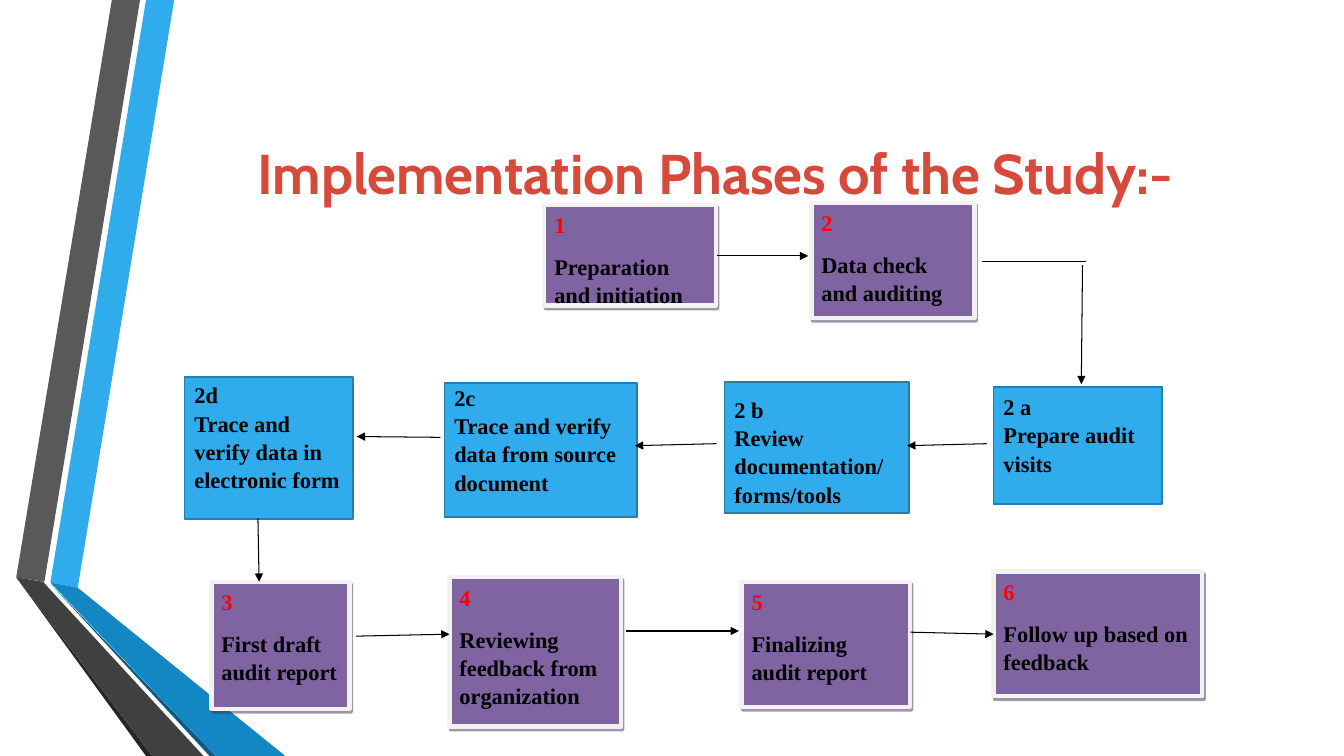
"""Build a slide showing the implementation phases of a study as a flow of boxes."""
from dataclasses import dataclass

from lxml import etree
from pptx import Presentation
from pptx.dml.color import RGBColor
from pptx.enum.shapes import MSO_CONNECTOR, MSO_SHAPE
from pptx.enum.text import MSO_ANCHOR, PP_ALIGN
from pptx.oxml.ns import qn
from pptx.util import Cm, Pt

RECT = MSO_SHAPE.RECTANGLE
LINE = MSO_CONNECTOR.STRAIGHT
TOP, MIDDLE = MSO_ANCHOR.TOP, MSO_ANCHOR.MIDDLE
LEFT, CENTER = PP_ALIGN.LEFT, PP_ALIGN.CENTER


@dataclass
class Theme:
    title: str = "D64A3B"
    phase: str = "8064A2"
    frame: str = "F2F2F2"
    shade: str = "3F3151"
    step: str = "30ACEC"
    edge: str = "247FAF"
    mark: str = "FF0000"
    ink: str = "000000"
    head: str = "Cabin"
    body: str = "Times New Roman"
    big: int = 40
    small: int = 16


theme = Theme()


def style(para, font, size, color):
    for run in para.runs:
        run.font.name = font
        run.font.size = Pt(size)
        run.font.bold = True
        run.font.color.rgb = RGBColor.from_string(color)


def add_box(area, lines, fill, edge, width, inset):
    box = slide.shapes.add_shape(RECT, *map(Cm, area))
    box.shadow.inherit = False
    box.fill.solid()
    box.fill.fore_color.rgb = RGBColor.from_string(fill)
    box.line.color.rgb = RGBColor.from_string(edge)
    box.line.width = Pt(width)
    frame = box.text_frame
    frame.word_wrap = True
    frame.vertical_anchor = TOP
    frame.margin_top = Cm(inset)
    frame.text = "\n".join(lines)
    for para in frame.paragraphs:
        para.alignment = LEFT
        para.line_spacing = 1.05
        style(para, theme.body, theme.small, theme.ink)
    return box


deck = Presentation()
deck.slide_width, deck.slide_height = Cm(33.87), Cm(19.05)
slide = deck.slides.add_slide(deck.slide_layouts[5])

bands = [
    ("30ACEC", [(1.27, 14.68), (1.96, 14.81), (4.39, 0), (3.68, 0)]),
    ("595959", [(3.53, 0), (2.82, 0), (0.41, 14.55), (1.12, 14.66)]),
    ("262626", [(0.41, 14.55), (3.68, 19.05), (3.84, 19.05)]),
    ("0C5A82", [(1.27, 14.71), (5.28, 19.05), (5.44, 19.05)]),
    ("1287C3", [(1.27, 14.68), (5.44, 19.05), (7.19, 19.05), (1.96, 14.81)]),
    ("404040", [(5.13, 19.05), (1.22, 14.81), (1.09, 14.66), (0.41, 14.55),
                (3.84, 19.05)]),
]
for color, points in bands:
    spots = [(Cm(x), Cm(y)) for x, y in points]
    path = slide.shapes.build_freeform(*spots[0])
    path.add_line_segments(spots[1:], close=True)
    band = path.convert_to_shape()
    band.shadow.inherit = False
    band.fill.solid()
    band.fill.fore_color.rgb = RGBColor.from_string(color)
    band.line.fill.background()

title = slide.shapes.title
title.left, title.top, title.width, title.height = map(Cm, (4.11, 1.9, 27.84, 4.88))
title.text_frame.text = "Implementation Phases of the Study:-"
title.text_frame.vertical_anchor = MIDDLE
title.text_frame.paragraphs[0].alignment = CENTER
style(title.text_frame.paragraphs[0], theme.head, theme.big, theme.title)

phases = [
    ((13.72, 5.16, 4.32, 2.54), "Preparation and initiation"),
    ((20.45, 5.11, 4.11, 2.9), "Data check and auditing"),
    ((5.33, 14.66, 3.48, 3.2), "First draft audit report"),
    ((11.33, 14.55, 4.32, 3.76), "Reviewing feedback from organization"),
    ((18.69, 14.66, 4.24, 3.15), "Finalizing audit report"),
    ((25.04, 14.4, 5.26, 3.15), "Follow up based on feedback"),
]
for count, (area, text) in enumerate(phases, 1):
    box = add_box(area, [str(count), text], theme.phase, theme.frame, 3, 0.13)
    for para in box.text_frame.paragraphs:
        para.space_after = Pt(10)
    style(box.text_frame.paragraphs[0], theme.body, theme.small, theme.mark)
    glow = box._element.spPr.find(qn("a:effectLst"))
    cast = etree.SubElement(glow, qn("a:outerShdw"), blurRad="0",
                            dist=str(Pt(2.2)), dir="3780000", algn="ctr", rotWithShape="0")
    tint = etree.SubElement(cast, qn("a:srgbClr"), val=theme.shade)
    etree.SubElement(tint, qn("a:alpha"), val="50000")

steps = [
    ((25.04, 9.75, 4.24, 2.95), "2 a", "Prepare audit visits", 0.13),
    ((18.26, 9.63, 4.65, 3.3), "2 b", "Review documentation/ forms/tools", 0.32),
    ((11.2, 9.65, 4.85, 3.38), "2c", "Trace and verify data from source document", 0),
    ((4.65, 9.5, 4.24, 3.58), "2d", "Trace and verify data in electronic form", 0.08),
]
for area, label, text, inset in steps:
    add_box(area, [label, text], theme.step, theme.edge, 1.25, inset)

links = [
    (18.06, 6.45, 20.37, 6.45, True),
    (24.74, 6.6, 27.36, 6.6, False),
    (27.28, 6.68, 27.25, 9.68, True),
    (24.87, 11.18, 22.86, 11.23, True),
    (18.06, 11.18, 16, 11.23, True),
    (11.1, 11.02, 8.99, 11, True),
    (6.5, 13.06, 6.53, 14.66, True),
    (8.97, 16.03, 11.33, 15.98, True),
    (15.77, 15.9, 18.62, 15.9, True),
    (22.94, 15.93, 25.04, 15.98, True),
]
for *ends, tipped in links:
    link = slide.shapes.add_connector(LINE, *map(Cm, ends))
    link.line.color.rgb = RGBColor.from_string(theme.ink)
    link.line.width = Pt(0.75)
    if tipped:
        etree.SubElement(link.line._get_or_add_ln(), qn("a:tailEnd"), type="triangle")
    etree.SubElement(link._element.spPr, qn("a:effectLst"))

deck.save("out.pptx")
